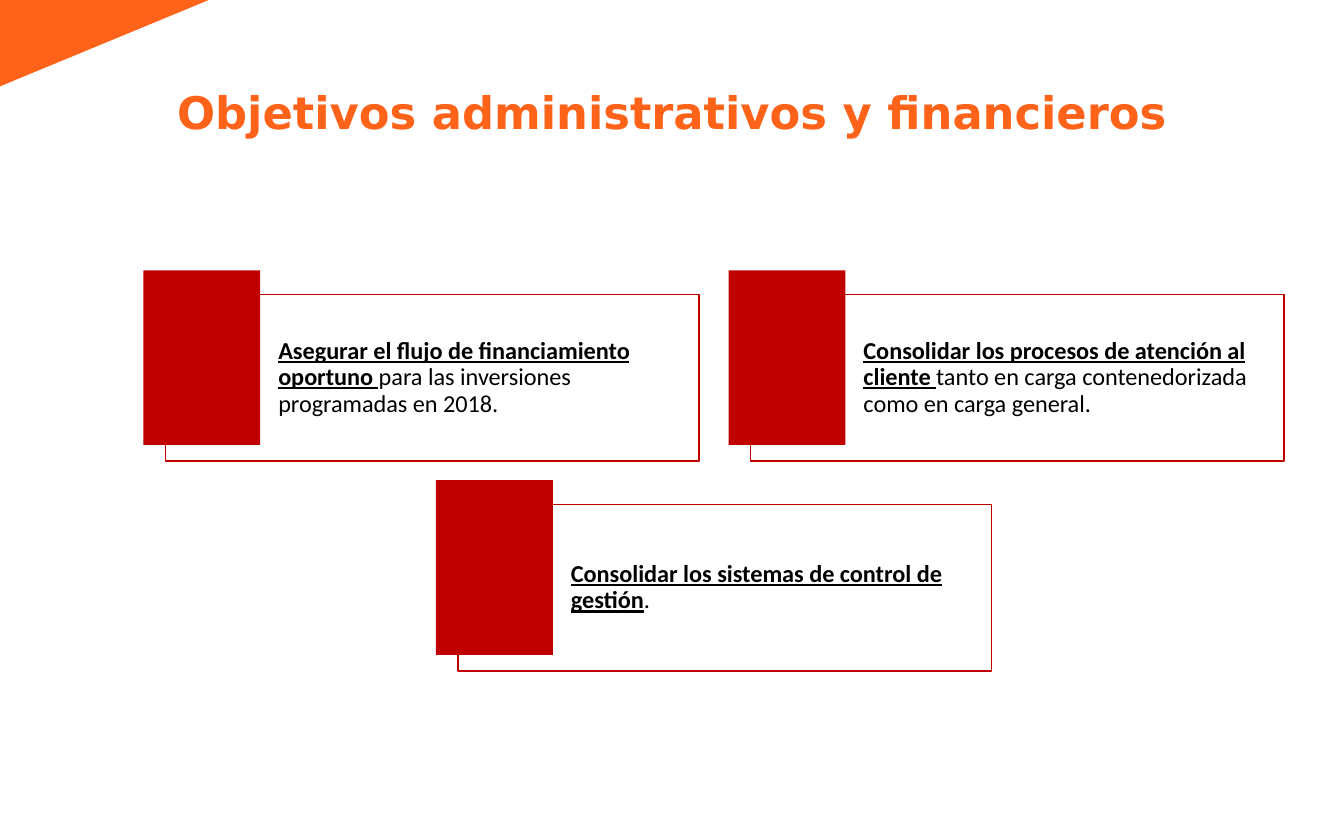
from dataclasses import dataclass

from pptx import Presentation
from pptx.dml.color import RGBColor
from pptx.enum.shapes import MSO_SHAPE as Kind
from pptx.enum.text import MSO_ANCHOR as Anchor, MSO_AUTO_SIZE as Fit, PP_ALIGN as Align
from pptx.shapes.autoshape import Shape
from pptx.slide import Slide
from pptx.util import Cm, Pt

ORANGE, RED, BLACK = "FF6319", "C00000", "000000"
LEFT, TOP = 2.71, 5.11
STEP_X, STEP_Y = 11.06, 3.97


@dataclass
class Goal:
    col: float
    row: int
    lead: str
    rest: str


GOALS = [
    Goal(0, 0, "Asegurar el flujo de financiamiento oportuno ",
         "para las inversiones programadas en 2018."),
    Goal(1, 0, "Consolidar los procesos de atención al cliente ",
         "tanto en carga contenedorizada como en carga general."),
    Goal(0.5, 1, "Consolidar los sistemas de control de gestión", "."),
]


def color(code: str) -> RGBColor:
    return RGBColor.from_string(code)


def add_solid(slide: Slide, kind: Kind, x: float, y: float,
              w: float, h: float, code: str) -> Shape:
    """Add a filled shape without outline; lengths in cm."""
    shape = slide.shapes.add_shape(kind, Cm(x), Cm(y), Cm(w), Cm(h))
    shape.shadow.inherit = False
    shape.fill.solid()
    shape.fill.fore_color.rgb = color(code)
    shape.line.fill.background()
    return shape


def add_title(slide: Slide, text: str) -> None:
    title = slide.shapes.title
    title.left, title.top = Cm(1.9), Cm(0.53)
    title.width, title.height = Cm(21.6), Cm(2.11)
    frame = title.text_frame
    frame.text = text
    frame.auto_size = Fit.NONE
    frame.vertical_anchor = Anchor.BOTTOM
    frame.margin_left = frame.margin_right = 0
    frame.margin_top = frame.margin_bottom = 0
    para = frame.paragraphs[0]
    para.alignment = Align.CENTER
    para.line_spacing = 0.9
    font = para.font
    font.name, font.size, font.bold = "DejaVu Sans", Pt(24), True
    font.color.rgb = color(ORANGE)


def add_goal(slide: Slide, goal: Goal) -> None:
    """Draw an outlined text card with a red block over its left corner."""
    x, y = LEFT + goal.col * STEP_X, TOP + goal.row * STEP_Y
    card = slide.shapes.add_shape(Kind.RECTANGLE, Cm(x + 0.42), Cm(y + 0.46),
                                  Cm(10.08), Cm(3.15))
    card.shadow.inherit = False
    card.fill.background()
    card.line.color.rgb = color(RED)
    card.line.width = Pt(0.75)

    frame = card.text_frame
    frame.word_wrap = True
    frame.vertical_anchor = Anchor.MIDDLE
    frame.margin_left = Cm(2.13)
    frame.margin_right = frame.margin_top = frame.margin_bottom = Cm(0.13)
    para = frame.paragraphs[0]
    para.alignment = Align.LEFT
    para.line_spacing = 0.9
    para.font.name, para.font.size = "Calibri", Pt(13)
    para.font.color.rgb = color(BLACK)
    lead = para.add_run()
    lead.text = goal.lead
    lead.font.bold = lead.font.underline = True
    para.add_run().text = goal.rest

    add_solid(slide, Kind.RECTANGLE, x, y, 2.21, 3.3, RED)


def main() -> None:
    deck = Presentation()
    deck.slide_width, deck.slide_height = Cm(25.4), Cm(15.88)
    slide = deck.slides.add_slide(deck.slide_layouts[5])
    corner = add_solid(slide, Kind.RIGHT_TRIANGLE, 1.15, -1.15, 1.63, 3.94, ORANGE)
    corner.rotation = 90
    add_title(slide, "Objetivos administrativos y financieros")
    for goal in GOALS:
        add_goal(slide, goal)
    deck.save("out.pptx")


if __name__ == "__main__":
    main()
